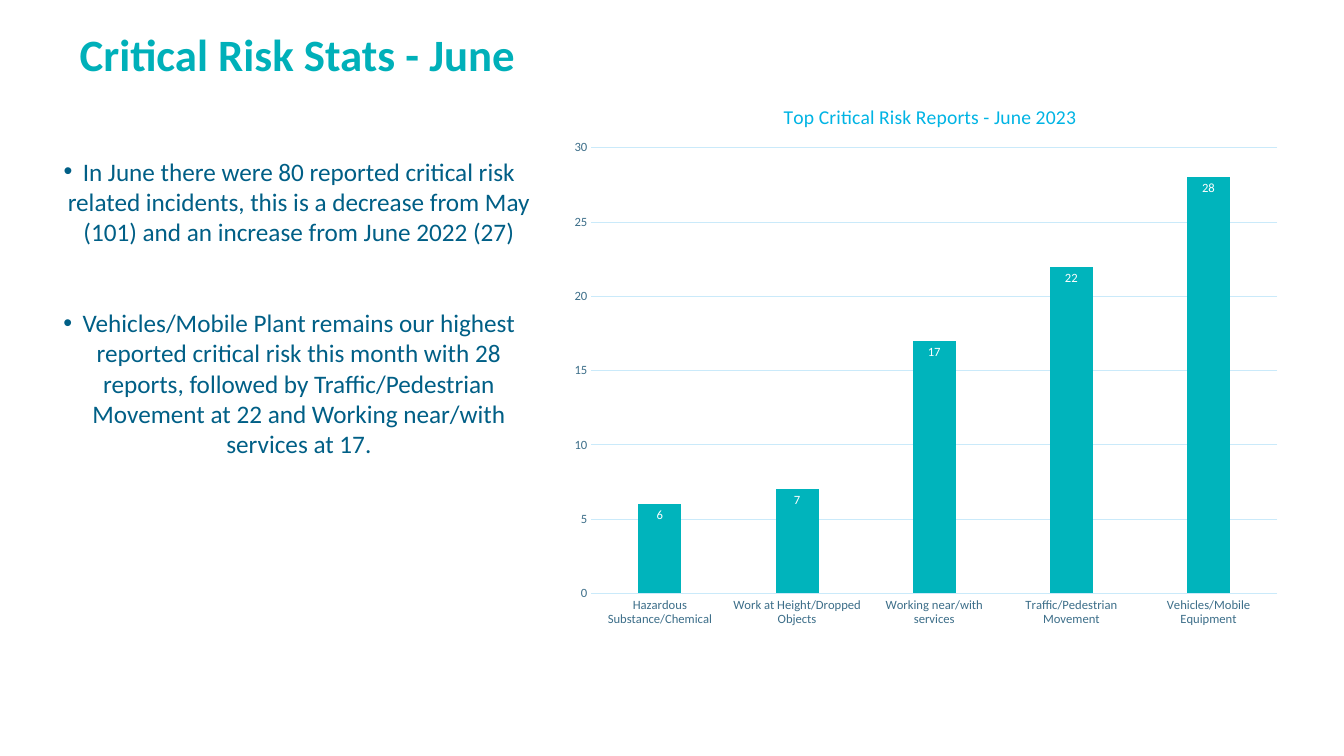
import dataclasses

import lxml.etree
import pptx
import pptx.chart.data
import pptx.dml.color
import pptx.enum.chart
import pptx.enum.text
import pptx.oxml
import pptx.oxml.ns
import pptx.util

Inches = pptx.util.Inches
Pt = pptx.util.Pt
qn = pptx.oxml.ns.qn


@dataclasses.dataclass(frozen=True)
class Theme:
    font: str = "Calibri"
    title_color: str = "00B0B9"
    body_color: str = "005F86"
    chart_title_color: str = "00B4E4"
    chart_color: str = "0A5075"
    axis_color: str = "3C6E89"
    grid_color: str = "CAEAFA"
    bar_color: str = "00B4BC"
    label_color: str = "FFFFFF"
    title_size: float = 32
    body_size: float = 18
    chart_title_size: float = 14
    chart_size: float = 10
    axis_size: float = 9


class SlideBuilder:
    def __init__(self, slide, theme):
        self.slide = slide
        self.theme = theme

    def style_font(self, font, size, color, bold=False):
        font.name = self.theme.font
        font.size = Pt(size)
        font.bold = bold
        font.color.rgb = pptx.dml.color.RGBColor.from_string(color)

    def style_line(self, line, color):
        line.color.rgb = pptx.dml.color.RGBColor.from_string(color)
        line.width = Pt(0.75)

    def title(self, text, left, top, width, height):
        shape = self.slide.shapes.title
        shape.left, shape.top = Inches(left), Inches(top)
        shape.width, shape.height = Inches(width), Inches(height)
        frame = shape.text_frame
        frame.text = text
        frame.auto_size = pptx.enum.text.MSO_AUTO_SIZE.NONE
        frame.vertical_anchor = pptx.enum.text.MSO_ANCHOR.TOP
        paragraph = frame.paragraphs[0]
        paragraph.alignment = pptx.enum.text.PP_ALIGN.LEFT
        paragraph.line_spacing = Pt(self.theme.title_size)
        self.style_font(paragraph.runs[0].font, self.theme.title_size, self.theme.title_color, True)

    def bullets(self, items, left, top, width, height):
        shape = self.slide.shapes.add_textbox(Inches(left), Inches(top), Inches(width), Inches(height))
        frame = shape.text_frame
        frame.word_wrap = True
        for index, text in enumerate(items):
            paragraph = frame.add_paragraph() if index else frame.paragraphs[0]
            paragraph.text = text
            paragraph.alignment = pptx.enum.text.PP_ALIGN.CENTER
            paragraph.line_spacing = Pt(21.6)
            if index:
                paragraph.space_before = Pt(43.2)
            properties = paragraph._p.get_or_add_pPr()
            properties.set("marL", str(Inches(0.19)))
            properties.set("indent", str(-Inches(0.19)))
            font_element = lxml.etree.SubElement(properties, qn("a:buFont"))
            font_element.set("typeface", "Arial")
            lxml.etree.SubElement(properties, qn("a:buChar")).set("char", "•")
            self.style_font(paragraph.runs[0].font, self.theme.body_size, self.theme.body_color)

    def place(self, parent, position, **values):
        for layout in parent.findall(qn("c:layout")):
            parent.remove(layout)
        layout = pptx.oxml.parse_xml(f"<c:layout {pptx.oxml.ns.nsdecls('c')}><c:manualLayout/></c:layout>")
        for name, value in values.items():
            lxml.etree.SubElement(layout[0], qn(f"c:{name}")).set("val", str(value))
        parent.insert(position, layout)

    def column_chart(self, title, values, left, top, width, height):
        theme = self.theme
        data = pptx.chart.data.CategoryChartData()
        data.categories = list(values)
        data.add_series("Series 1", list(values.values()))
        chart = self.slide.shapes.add_chart(
            pptx.enum.chart.XL_CHART_TYPE.COLUMN_CLUSTERED,
            Inches(left), Inches(top), Inches(width), Inches(height), data,
        ).chart
        self.style_font(chart.font, theme.chart_size, theme.chart_color)
        chart.has_legend = False
        chart.has_title = True
        title_frame = chart.chart_title.text_frame
        title_frame.text = title
        self.style_font(title_frame.paragraphs[0].runs[0].font, theme.chart_title_size, theme.chart_title_color)
        self.place(chart.chart_title._element, 1, xMode="edge", yMode="edge", x=0.3, y=0.04)
        self.place(
            chart._chartSpace.chart.plotArea, 0, layoutTarget="inner",
            xMode="edge", yMode="edge", x=0.042, y=0.125, w=0.937, h=0.794,
        )
        for axis in (chart.category_axis, chart.value_axis):
            axis.major_tick_mark = pptx.enum.chart.XL_TICK_MARK.NONE
            axis.minor_tick_mark = pptx.enum.chart.XL_TICK_MARK.NONE
            self.style_font(axis.tick_labels.font, theme.axis_size, theme.axis_color)
        self.style_line(chart.category_axis.format.line, theme.grid_color)
        value_axis = chart.value_axis
        value_axis.minimum_scale, value_axis.maximum_scale = 0, 30
        value_axis.major_unit = 5
        value_axis.format.line.fill.background()
        value_axis.has_major_gridlines = True
        self.style_line(value_axis.major_gridlines.format.line, theme.grid_color)
        plot = chart.plots[0]
        plot.gap_width, plot.overlap = 219, -27
        plot.vary_by_categories = False
        series = plot.series[0]
        series.format.fill.solid()
        series.format.fill.fore_color.rgb = pptx.dml.color.RGBColor.from_string(theme.bar_color)
        labels = series.data_labels
        labels.show_value = True
        labels.position = pptx.enum.chart.XL_LABEL_POSITION.INSIDE_END
        self.style_font(labels.font, theme.axis_size, theme.label_color)


def main():
    presentation = pptx.Presentation()
    presentation.slide_width = Inches(13.33)
    presentation.slide_height = Inches(7.5)
    slide = presentation.slides.add_slide(presentation.slide_layouts[5])
    builder = SlideBuilder(slide, Theme())
    builder.title("Critical Risk Stats - June", 0.69, 0.3, 11.95, 0.93)
    builder.bullets(
        [
            "In June there were 80 reported critical risk related incidents, "
            "this is a decrease from May (101) and an increase from June 2022 (27)",
            "Vehicles/Mobile Plant remains our highest reported critical risk this month "
            "with 28 reports, followed by Traffic/Pedestrian Movement at 22 and "
            "Working near/with services at 17.",
        ],
        0.33, 1.5, 5.08, 5.03,
    )
    builder.column_chart(
        "Top Critical Risk Reports - June 2023",
        {
            "Hazardous Substance/Chemical": 6,
            "Work at Height/Dropped Objects": 7,
            "Working near/with services": 17,
            "Traffic/Pedestrian Movement": 22,
            "Vehicles/Mobile Equipment": 28,
        },
        5.56, 0.77, 7.26, 5.57,
    )
    presentation.save("out.pptx")


if __name__ == "__main__":
    main()
